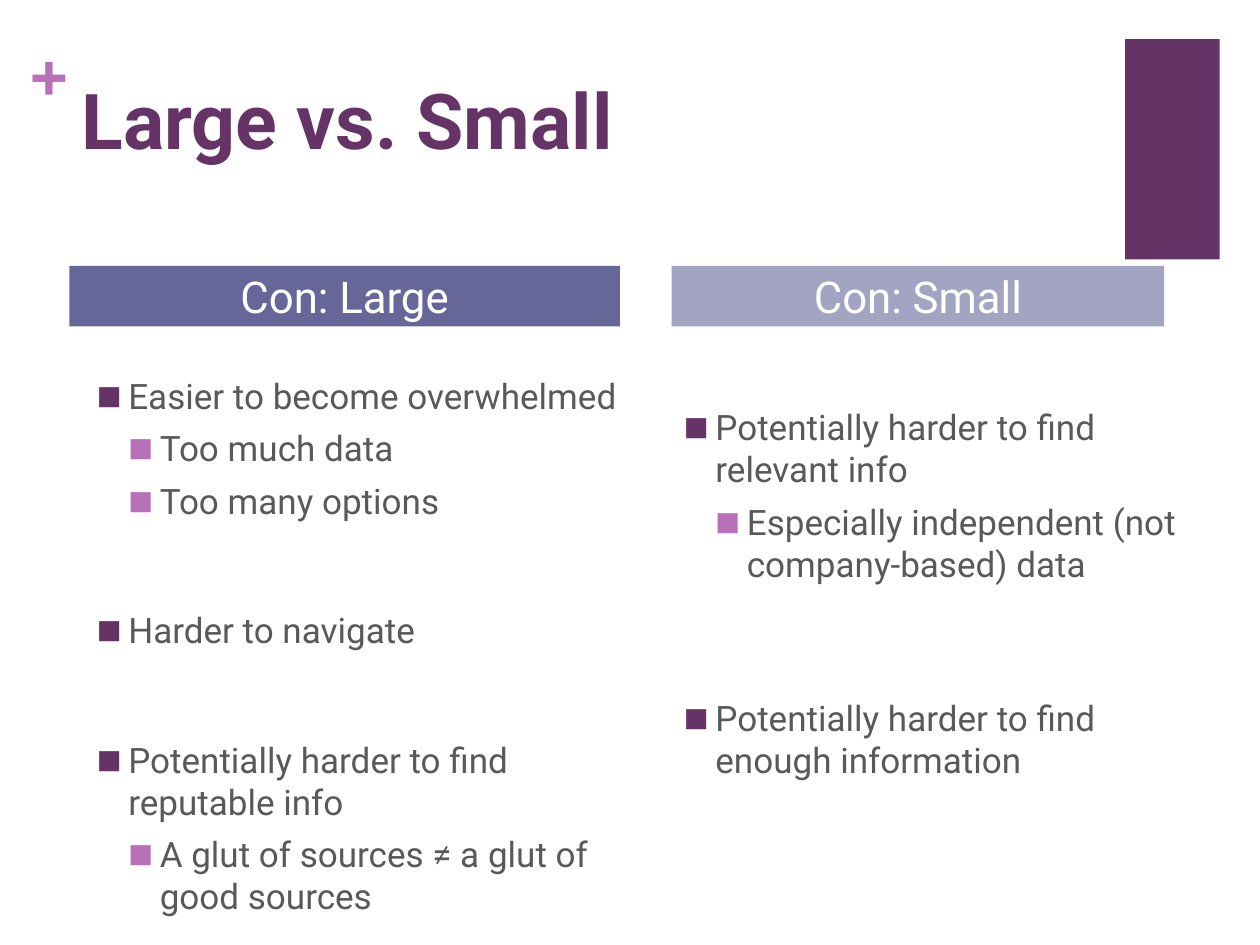
import pptx
import pptx.util
import pptx.dml.color
import pptx.enum.shapes
import pptx.enum.text
from lxml import etree

Inches = pptx.util.Inches
Pt = pptx.util.Pt
ALIGN = pptx.enum.text.PP_ALIGN
ANCHOR = pptx.enum.text.MSO_ANCHOR
PLUM, ORCHID, GREY = "663366", "B870B8", "595959"


def rgb(value):
    return pptx.dml.color.RGBColor.from_string(value)


def add_text(p, text, size=20, color=GREY, font="Roboto", bold=False,
             align=ALIGN.LEFT, before=0, level=None):
    p.alignment = align
    p.space_before = Pt(before)
    r = p.add_run()
    r.text = text
    r.font.size = Pt(size)
    r.font.name = font
    r.font.bold = bold
    r.font.color.rgb = rgb(color)
    if level is not None:
        p.level = level
        pPr = p._p.get_or_add_pPr()
        pPr.set("marL", str(Inches(0.25 * (level + 1))))
        pPr.set("indent", str(Inches(-0.25)))
        ns = pptx.oxml.ns.qn
        bullet = etree.SubElement(pPr, ns("a:buClr"))
        etree.SubElement(bullet, ns("a:srgbClr"), val=(PLUM, ORCHID)[level])
        etree.SubElement(pPr, ns("a:buSzPct"), val="75000")
        etree.SubElement(pPr, ns("a:buFont"), typeface="Roboto")
        etree.SubElement(pPr, ns("a:buChar"), char="■")


prs = pptx.Presentation()
prs.slide_width, prs.slide_height = Inches(10), Inches(7.5)
s = prs.slides.add_slide(prs.slide_layouts[6])

bars = [
    (8.93, 0.31, 0.75, 1.75, PLUM, ""),
    (0.55, 2.11, 4.37, 0.48, "666699", "Con: Large"),
    (5.33, 2.11, 3.91, 0.48, "A3A3C2", "Con: Small"),
]
for x, y, w, h, color, label in bars:
    sp = s.shapes.add_shape(pptx.enum.shapes.MSO_SHAPE.RECTANGLE,
                            Inches(x), Inches(y), Inches(w), Inches(h))
    sp.shadow.inherit = False
    sp.fill.solid()
    sp.fill.fore_color.rgb = rgb(color)
    sp.line.fill.background()
    if label:
        tf = sp.text_frame
        tf.margin_top = tf.margin_bottom = 0
        tf.vertical_anchor = ANCHOR.MIDDLE
        add_text(tf.paragraphs[0], label, size=25, color="FFFFFF", align=ALIGN.CENTER)

sp = s.shapes.add_textbox(Inches(0.24), Inches(0.25), Inches(0.29), Inches(0.61))
tf = sp.text_frame
tf.margin_left = tf.margin_right = tf.margin_top = tf.margin_bottom = 0
add_text(tf.paragraphs[0], "+", size=36, color=ORCHID, font="TeX Gyre Bonum", bold=True)

sp = s.shapes.add_textbox(Inches(0.55), Inches(0.53), Inches(8.26), Inches(1.22))
tf = sp.text_frame
tf.word_wrap = True
add_text(tf.paragraphs[0], "Large vs. Small", size=44, color=PLUM, bold=True)

columns = [
    (0.67, 2.92, 4.33, 4.08, [
        (0, 20, "Easier to become overwhelmed"),
        (1, 6, "Too much data"),
        (1, 6, "Too many options"),
        (0, 50, "Harder to navigate"),
        (0, 50, "Potentially harder to find reputable info"),
        (1, 6, "A glut of sources ≠ a glut of good sources"),
    ]),
    (5.33, 3.17, 4.16, 3.36, [
        (0, 20, "Potentially harder to find relevant info"),
        (1, 6, "Especially independent (not company-based) data"),
        (0, 64, "Potentially harder to find enough information"),
    ]),
]
for x, y, w, h, items in columns:
    sp = s.shapes.add_textbox(Inches(x), Inches(y), Inches(w), Inches(h))
    tf = sp.text_frame
    tf.word_wrap = True
    for i, (level, before, text) in enumerate(items):
        p = tf.add_paragraph() if i else tf.paragraphs[0]
        add_text(p, text, before=before, level=level)

prs.save("out.pptx")
